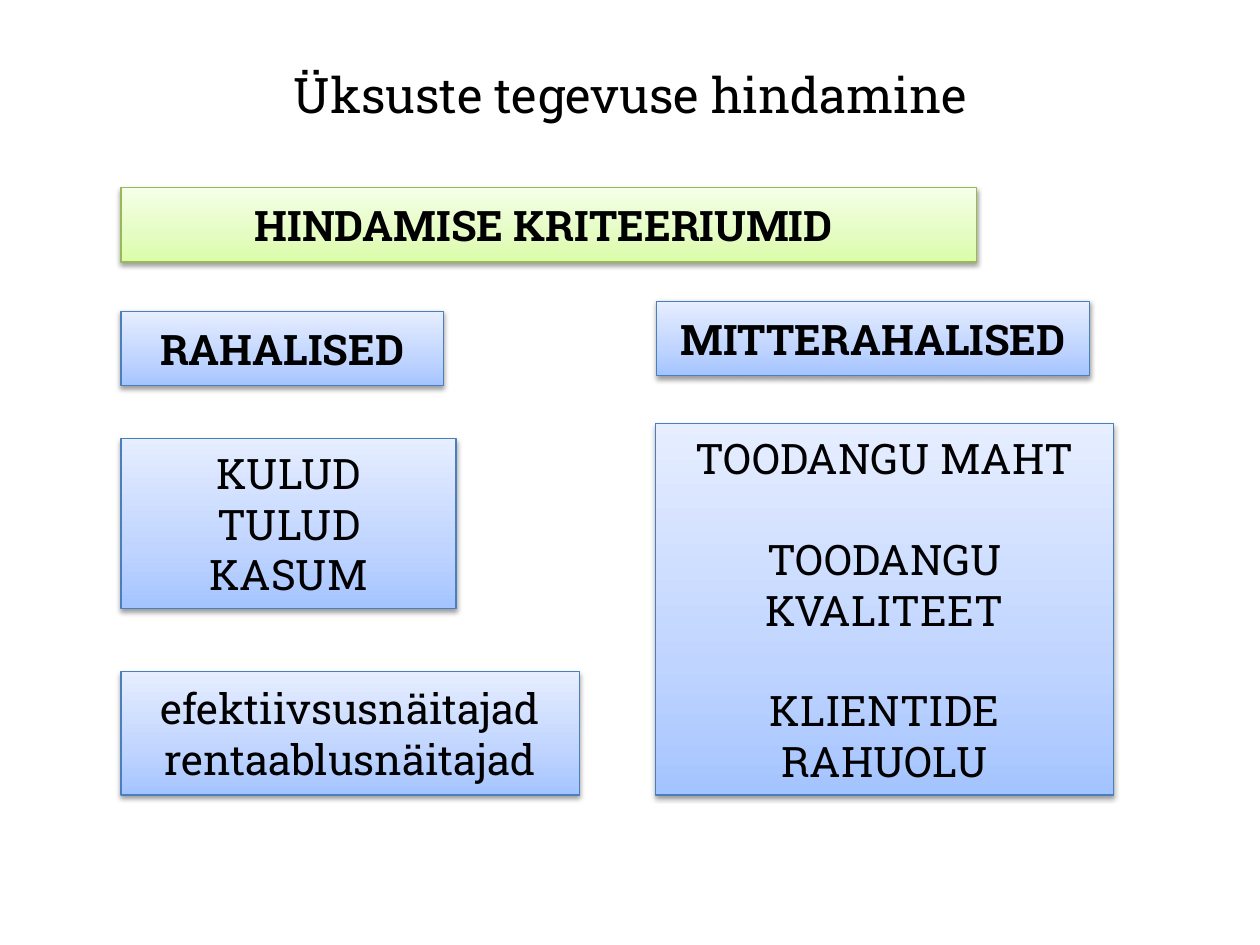
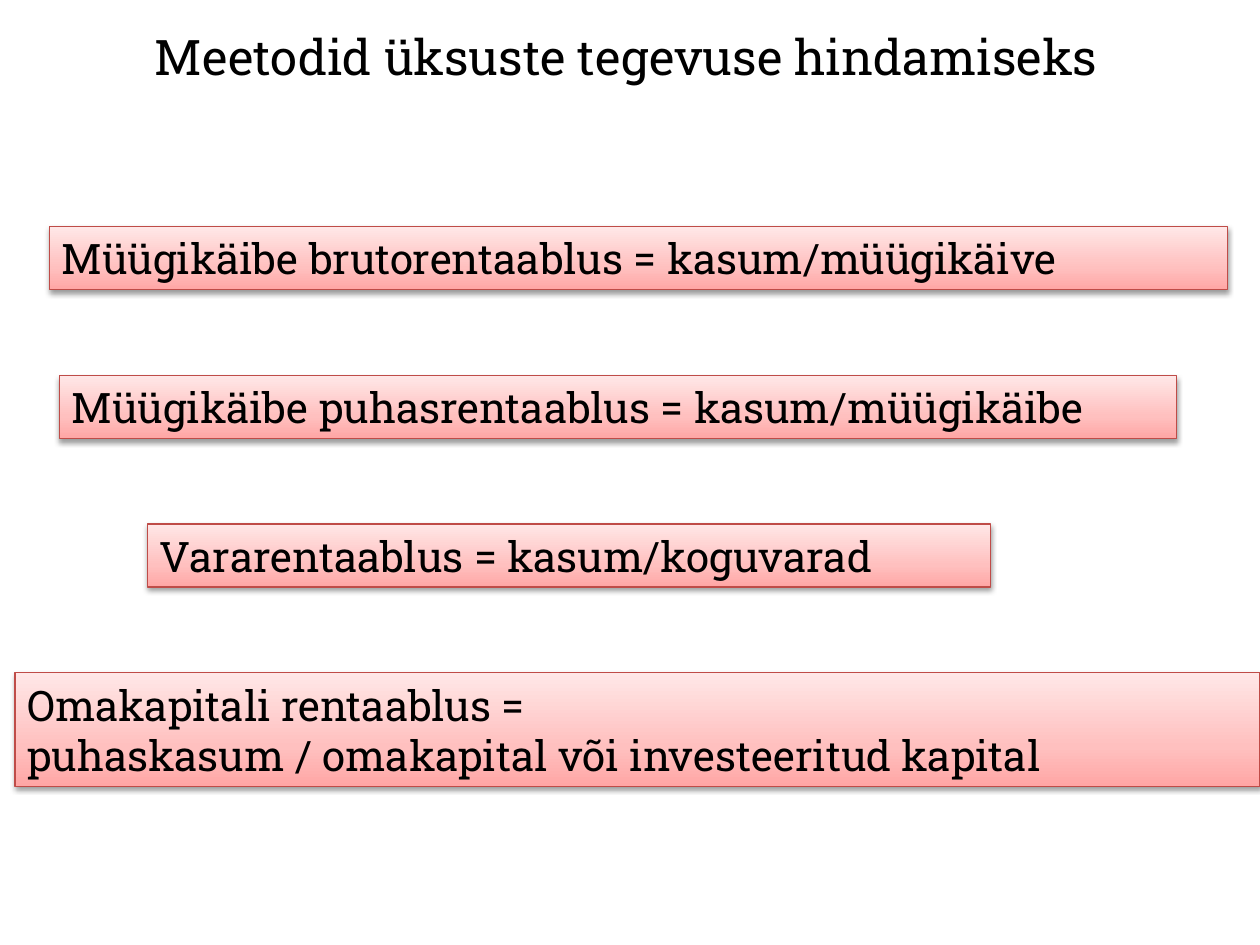
from dataclasses import dataclass

from lxml.etree import SubElement
from pptx import Presentation
from pptx.dml.color import RGBColor
from pptx.enum.shapes import MSO_SHAPE as Shape
from pptx.enum.text import MSO_ANCHOR as Anchor, MSO_AUTO_SIZE as AutoSize, PP_ALIGN as Align
from pptx.oxml.ns import qn
from pptx.util import Inches, Pt


@dataclass(frozen=True)
class Palette:
    line: str
    stops: tuple


@dataclass(frozen=True)
class Theme:
    font: str = "Roboto Slab"
    text: str = "000000"
    title_size: int = 28
    body_size: int = 24
    line_width: float = 0.75
    group_gap: float = 28.8
    green: Palette = Palette("98B955", ("DAFDA7", "E4FCC2", "F5FFE7"))
    blue: Palette = Palette("4B7EBC", ("A4C4FF", "BFD4FF", "E6EEFF"))
    red: Palette = Palette("BF4C48", ("FFA6A5", "FFC0BF", "FFE7E7"))
    stop_positions: tuple = (0, 35, 100)
    shadow_blur: float = 3.1
    shadow_distance: float = 1.6
    shadow_opacity: int = 38


THEME = Theme()


def add_text(paragraph, text, size, bold=False, align=Align.CENTER):
    paragraph.alignment = align
    run = paragraph.add_run()
    run.text = text
    run.font.name = THEME.font
    run.font.size = Pt(size)
    run.font.bold = bold
    run.font.color.rgb = RGBColor.from_string(THEME.text)


def add_color(parent, value):
    return SubElement(parent, qn("a:srgbClr"), val=value)


def fill_gradient(shape, colors):
    shape.fill.gradient()
    shape.fill.gradient_angle = 90
    stop_list = shape._element.spPr.find(qn("a:gradFill")).find(qn("a:gsLst"))
    for stop in list(stop_list):
        stop_list.remove(stop)
    for position, color in zip(THEME.stop_positions, colors):
        add_color(SubElement(stop_list, qn("a:gs"), pos=str(position * 1000)), color)


def add_shadow(shape):
    shape.shadow.inherit = False
    effects = shape._element.spPr.find(qn("a:effectLst"))
    shadow = SubElement(
        effects, qn("a:outerShdw"),
        blurRad=str(Pt(THEME.shadow_blur)), dist=str(Pt(THEME.shadow_distance)),
        dir="5400000", rotWithShape="0")
    SubElement(add_color(shadow, THEME.text), qn("a:alpha"), val=str(THEME.shadow_opacity * 1000))


def add_panel(slide, box, lines, palette, bold=False, align=Align.CENTER, gap=0):
    shape = slide.shapes.add_shape(Shape.RECTANGLE, *map(Inches, box))
    fill_gradient(shape, palette.stops)
    shape.line.color.rgb = RGBColor.from_string(palette.line)
    shape.line.width = Pt(THEME.line_width)
    add_shadow(shape)
    frame = shape.text_frame
    frame.word_wrap = True
    frame.vertical_anchor = Anchor.MIDDLE
    for index, line in enumerate(lines):
        paragraph = frame.add_paragraph() if index else frame.paragraphs[0]
        paragraph.space_before = Pt(gap if index else 0)
        add_text(paragraph, line, THEME.body_size, bold, align)
    return shape


def add_titled_slide(presentation, title, left, top):
    slide = presentation.slides.add_slide(presentation.slide_layouts[5])
    placeholder = slide.shapes.title
    placeholder.left, placeholder.top = Inches(left), Inches(top)
    placeholder.width, placeholder.height = Inches(9), Inches(0.89)
    placeholder.text_frame.vertical_anchor = Anchor.MIDDLE
    add_text(placeholder.text_frame.paragraphs[0], title, THEME.title_size)
    return slide


def add_monetary_column(slide, left, top):
    add_panel(slide, (left, top, 2.56, 0.59), ["RAHALISED"], THEME.blue, bold=True)
    add_panel(slide, (left, top + 1.01, 2.66, 1.35), ["KULUD", "TULUD", "KASUM"], THEME.blue)
    add_panel(slide, (left, top + 2.86, 3.64, 0.98),
              ["efektiivsusnäitajad", "rentaablusnäitajad"], THEME.blue)


def add_nonmonetary_column(slide, left, top):
    add_panel(slide, (left + 0.01, top, 3.44, 0.59), ["MITTERAHALISED"], THEME.blue, bold=True)
    add_panel(slide, (left, top + 0.97, 3.64, 2.95),
              ["TOODANGU MAHT", "TOODANGU KVALITEET", "KLIENTIDE RAHUOLU"],
              THEME.blue, gap=THEME.group_gap)


def build_criteria_slide(presentation):
    slide = add_titled_slide(presentation, "Üksuste tegevuse hindamine", 0.5, 0.3)
    add_panel(slide, (0.96, 1.49, 6.79, 0.59), ["HINDAMISE KRITEERIUMID "], THEME.green, bold=True)
    add_monetary_column(slide, 0.96, 2.47)
    add_nonmonetary_column(slide, 5.2, 2.39)


def add_formulas(slide, top, pitch, formulas):
    for row, (left, width, lines) in enumerate(formulas):
        height = 0.1 + 0.4 * len(lines)
        panel = add_panel(slide, (left, top + row * pitch, width, height), lines,
                          THEME.red, align=Align.LEFT)
        panel.text_frame.vertical_anchor = Anchor.TOP
        panel.text_frame.auto_size = AutoSize.SHAPE_TO_FIT_TEXT


def build_methods_slide(presentation):
    slide = add_titled_slide(presentation, "Meetodid üksuste tegevuse hindamiseks", 0.47, 0)
    add_formulas(slide, 1.8, 1.18, [
        (0.39, 9.35, ["Müügikäibe brutorentaablus = kasum/müügikäive"]),
        (0.47, 8.87, ["Müügikäibe puhasrentaablus = kasum/müügikäibe"]),
        (1.17, 6.69, ["Vararentaablus = kasum/koguvarad"]),
        (0.12, 9.88, ["Omakapitali rentaablus =",
                      "puhaskasum / omakapital või investeeritud kapital"]),
    ])


def main():
    presentation = Presentation()
    presentation.slide_width, presentation.slide_height = Inches(10), Inches(7.5)
    build_criteria_slide(presentation)
    build_methods_slide(presentation)
    presentation.save("out.pptx")


if __name__ == "__main__":
    main()
